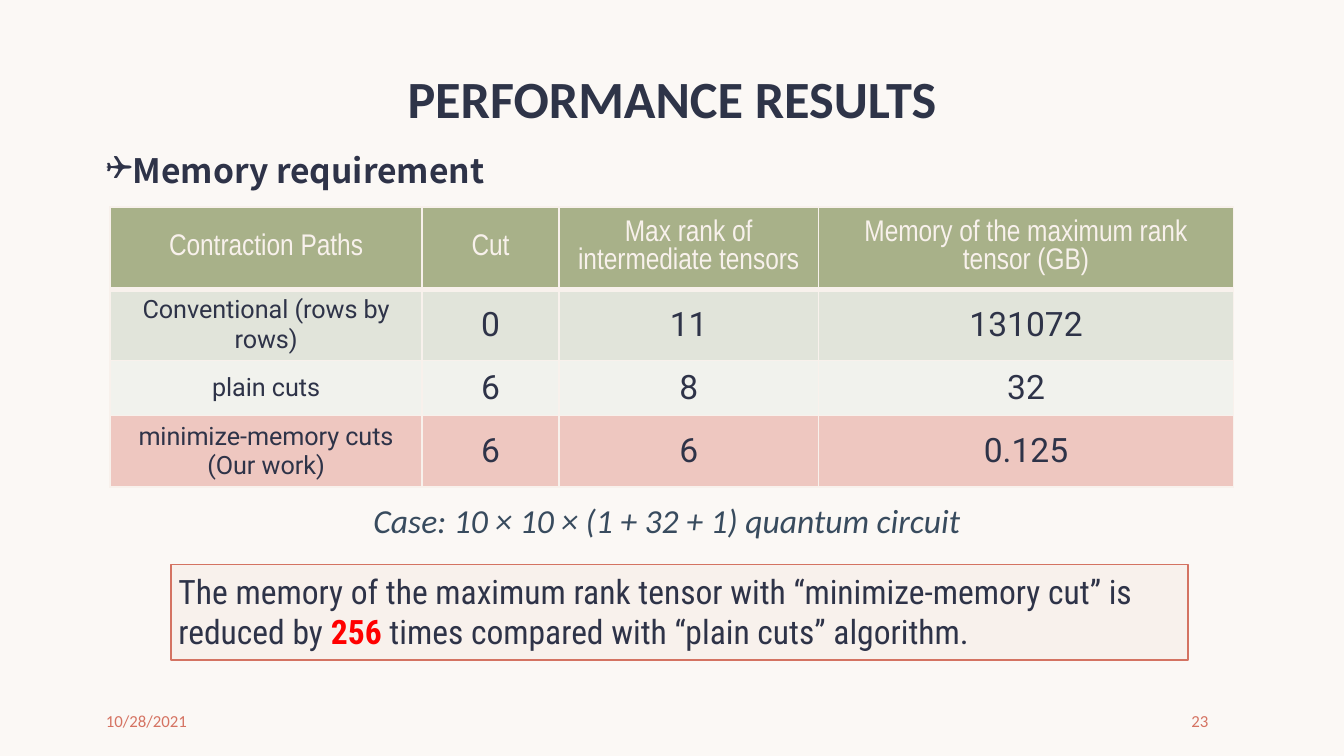
from lxml import etree
from pptx import Presentation
from pptx.dml.color import RGBColor
from pptx.enum.shapes import MSO_SHAPE
from pptx.enum.text import MSO_ANCHOR, PP_ALIGN
from pptx.oxml.ns import qn
from pptx.util import Inches, Pt

RECT = MSO_SHAPE.RECTANGLE
TOP, MIDDLE = MSO_ANCHOR.TOP, MSO_ANCHOR.MIDDLE
LEFT, CENTER, RIGHT, JUSTIFY = (
    PP_ALIGN.LEFT, PP_ALIGN.CENTER, PP_ALIGN.RIGHT, PP_ALIGN.JUSTIFY)

COLORS = {
    "back": "FBF8F5", "cream": "F8F1EC", "coral": "D47362", "small": "D57362",
    "title": "2E3448", "ink": "2E3348", "slate": "384B5E", "red": "FF0000",
    "head": "A8B189", "sage": "E1E4DA", "pale": "F1F2ED", "pink": "EEC7C0",
}
TITLE = "PERFORMANCE RESULTS"
TOPIC = "Memory requirement"
DATE, PAGE = "10/28/2021", "23"
CASE = "Case: 10 × 10 × (1 + 32 + 1) quantum circuit"
CLAIM = [
    ("The memory of the maximum rank tensor with “minimize-memory cut” is reduced by ", False),
    ("256", True),
    (" times compared with “plain cuts” algorithm.", False),
]
ROWS = [
    ("Contraction Paths", "Cut", "Max rank of intermediate tensors",
     "Memory of the maximum rank tensor (GB)"),
    ("Conventional (rows by rows)", "0", "11", "131072"),
    ("plain cuts", "6", "8", "32"),
    ("minimize-memory cuts\n(Our work)", "6", "6", "0.125"),
]
FILLS = ["head", "sage", "pale", "pink"]
WIDTHS = [2.32, 1.02, 1.93, 3.09]
HEIGHT = 0.41


def rgb(name):
    return RGBColor.from_string(COLORS[name])


def style(font, size, face, color, bold=False, italic=False):
    font.size = Pt(size)
    font.name = face
    font.color.rgb = rgb(color)
    font.bold = bold
    font.italic = italic


def add_text(slide, box, text, look, align=LEFT, anchor=TOP):
    frame = slide.shapes.add_textbox(*map(Inches, box)).text_frame
    frame.word_wrap = True
    frame.vertical_anchor = anchor
    frame.text = text
    para = frame.paragraphs[0]
    para.alignment = align
    for run in para.runs:
        style(run.font, *look)
    return para


def add_bullet(para, char, indent):
    props = para._p.get_or_add_pPr()
    props.set("marL", str(Inches(indent)))
    props.set("indent", str(-Inches(indent)))
    etree.SubElement(props, qn("a:buFont")).set("typeface", "Wingdings")
    etree.SubElement(props, qn("a:buChar")).set("char", char)


def set_edges(cell, low):
    props = cell._tc.get_or_add_tcPr()
    for spot, (side, width) in enumerate([("L", 1), ("R", 1), ("T", 1), ("B", low)]):
        line = etree.Element(qn("a:ln" + side), w=str(Pt(width)))
        fill = etree.SubElement(line, qn("a:solidFill"))
        etree.SubElement(fill, qn("a:srgbClr")).set("val", COLORS["cream"])
        props.insert(spot, line)


def add_grid(slide):
    box = (0.82, 1.54, sum(WIDTHS), HEIGHT * len(ROWS))
    frame = slide.shapes.add_table(
        len(ROWS), len(WIDTHS), *map(Inches, box))
    grid = frame.table
    for col, width in zip(grid.columns, WIDTHS):
        col.width = Inches(width)
    for r, (row, fill) in enumerate(zip(ROWS, FILLS)):
        grid.rows[r].height = Inches(HEIGHT)
        for c, text in enumerate(row):
            if r == 0:
                look = (16, "Arial Narrow", "cream")
            else:
                look = (18 if c else 13.5, "Roboto", "ink")
            cell = grid.cell(r, c)
            cell.text_frame.text = text
            cell.vertical_anchor = MIDDLE
            cell.margin_left = cell.margin_right = Inches(0.08)
            cell.margin_top = cell.margin_bottom = Inches(0.04)
            cell.fill.solid()
            cell.fill.fore_color.rgb = rgb(fill)
            set_edges(cell, 1 if r else 3)
            for para in cell.text_frame.paragraphs:
                para.alignment = CENTER
                for run in para.runs:
                    style(run.font, *look)
    frame.height = Inches(1.99)


def main():
    deck = Presentation()
    deck.slide_width, deck.slide_height = Inches(10), Inches(5.625)
    slide = deck.slides.add_slide(deck.slide_layouts[5])
    slide.background.fill.solid()
    slide.background.fill.fore_color.rgb = rgb("back")

    panel = slide.shapes.add_shape(RECT, *map(Inches, (1.27, 4.2, 7.57, 0.71)))
    panel.shadow.inherit = False
    panel.fill.solid()
    panel.fill.fore_color.rgb = rgb("cream")
    panel.line.color.rgb = rgb("coral")
    panel.line.width = Pt(1)

    title = slide.shapes.title
    title.left, title.top, title.width, title.height = map(
        Inches, (0.69, 0.36, 8.62, 0.79))
    title.text_frame.text = TITLE
    title.text_frame.vertical_anchor = MIDDLE
    para = title.text_frame.paragraphs[0]
    para.alignment = CENTER
    para.line_spacing = 0.9
    style(para.runs[0].font, 28, "Calibri", "title", True)

    small = (9, "Calibri", "small")
    add_text(slide, (0.69, 5.21, 0.97, 0.3), DATE, small, LEFT, MIDDLE)
    add_text(slide, (8.59, 5.21, 0.5, 0.3), PAGE, small, RIGHT, MIDDLE)

    topic = add_text(slide, (0.69, 1.1, 8.62, 3.1), TOPIC,
                     (18, "Noto Sans CJK SC", "ink", True), JUSTIFY)
    add_bullet(topic, "❑", 0.19)
    topic.line_spacing = 0.9

    add_grid(slide)
    add_text(slide, (2.68, 3.67, 4.98, 0.4), CASE,
             (18, "Calibri", "slate", False, True))

    claim = add_text(slide, (1.23, 4.2, 7.74, 0.71), "", ())
    for text, strong in CLAIM:
        run = claim.add_run()
        run.text = text
        style(run.font, 18, "Roboto Condensed", "red" if strong else "ink", strong)

    deck.save("out.pptx")


if __name__ == "__main__":
    main()
